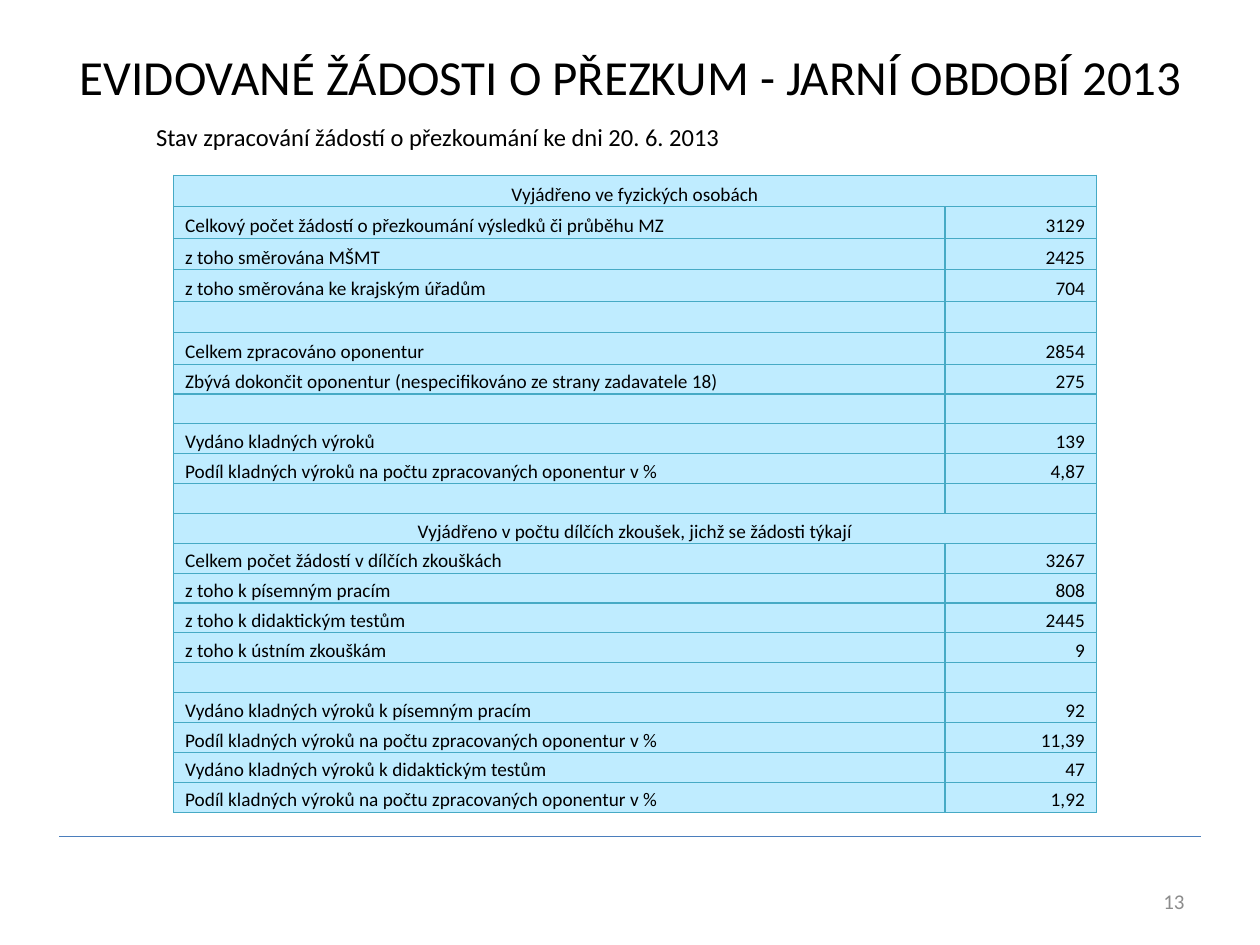
from lxml import etree
from pptx import Presentation
from pptx.dml.color import RGBColor
from pptx.enum import text
from pptx.oxml import ns
from pptx.util import Inches, Pt

FONT = "Calibri"
BLACK, GREY, BLUE = "000000", "8C8C8C", "4B7EBC"
CELL_FILL, CELL_BORDER = "BFECFF", "46AAC5"
LEFT, CENTER, RIGHT = text.PP_ALIGN.LEFT, text.PP_ALIGN.CENTER, text.PP_ALIGN.RIGHT
TOP, MIDDLE = text.MSO_ANCHOR.TOP, text.MSO_ANCHOR.MIDDLE

# One entry is a section heading, two are a label with its value, none is a gap.
REQUESTS = [
    ("Vyjádřeno ve fyzických osobách",),
    ("Celkový počet žádostí o přezkoumání výsledků či průběhu MZ", "3129"),
    ("z toho směrována MŠMT", "2425"),
    ("z toho směrována ke krajským úřadům", "704"),
    (),
    ("Celkem zpracováno oponentur", "2854"),
    ("Zbývá dokončit oponentur (nespecifikováno ze strany zadavatele 18)", "275"),
    (),
    ("Vydáno kladných výroků", "139"),
    ("Podíl kladných výroků na počtu zpracovaných oponentur v %", "4,87"),
    (),
    ("Vyjádřeno v počtu dílčích zkoušek, jichž se žádosti týkají",),
    ("Celkem počet žádostí v dílčích zkouškách", "3267"),
    ("z toho k písemným pracím", "808"),
    ("z toho k didaktickým testům", "2445"),
    ("z toho k ústním zkouškám", "9"),
    (),
    ("Vydáno kladných výroků k písemným pracím", "92"),
    ("Podíl kladných výroků na počtu zpracovaných oponentur v %", "11,39"),
    ("Vydáno kladných výroků k didaktickým testům", "47"),
    ("Podíl kladných výroků na počtu zpracovaných oponentur v %", "1,92"),
]
TALL_ROWS, TALL_HEIGHT = 6, 0.25


def rgb(value):
    return RGBColor.from_string(value)


def write(paragraph, words, size, color, align):
    paragraph.alignment = align
    run = paragraph.add_run()
    run.text = words
    run.font.name, run.font.size = FONT, Pt(size)
    run.font.color.rgb = rgb(color)


def add_label(slide, box, words, size, color=BLACK, align=LEFT, anchor=TOP):
    frame = slide.shapes.add_textbox(*map(Inches, box)).text_frame
    frame.word_wrap = True
    frame.vertical_anchor = anchor
    write(frame.paragraphs[0], words, size, color, align)


def add_footer(slide, box, number):
    """Rule along the top of the box, page number at its lower right."""
    left, top, width, height = box
    rule = slide.shapes.add_connector(
        1, Inches(left), Inches(top), Inches(left + width), Inches(top))
    rule.line.color.rgb = rgb(BLUE)
    rule.line.width = Pt(0.75)
    etree.SubElement(rule._element.spPr, ns.qn("a:effectLst"))
    add_label(slide, (left + width - 2.36, top + height - 0.4, 2.33, 0.4),
              number, 12, GREY, RIGHT, MIDDLE)


def style_cell(cell):
    """Thin border on all four sides, then the fill, in schema order."""
    properties = cell._tc.get_or_add_tcPr()
    for side in ("lnL", "lnR", "lnT", "lnB"):
        border = etree.SubElement(properties, ns.qn(f"a:{side}"), w=str(Pt(0.75)))
        solid = etree.SubElement(border, ns.qn("a:solidFill"))
        etree.SubElement(solid, ns.qn("a:srgbClr"), val=CELL_BORDER)
    cell.fill.solid()
    cell.fill.fore_color.rgb = rgb(CELL_FILL)
    cell.vertical_anchor = text.MSO_ANCHOR.BOTTOM
    cell.margin_left = cell.margin_right = cell.margin_top = Inches(0.01)
    cell.margin_bottom = 0


def add_request_table(slide, box):
    left, top, width, height = box
    table = slide.shapes.add_table(len(REQUESTS), 2, *map(Inches, box)).table
    value_width = 1.2
    table.columns[0].width = Inches(width - value_width)
    table.columns[1].width = Inches(value_width)
    low_height = (height - TALL_ROWS * TALL_HEIGHT) / (len(REQUESTS) - TALL_ROWS)

    for index, entries in enumerate(REQUESTS):
        table.rows[index].height = Inches(TALL_HEIGHT if index < TALL_ROWS else low_height)
        label, value = table.cell(index, 0), table.cell(index, 1)
        for cell in (label, value):
            style_cell(cell)
        if len(entries) == 1:
            label.merge(value)
            write(label.text_frame.paragraphs[0], entries[0], 11, BLACK, CENTER)
        elif entries:
            label.margin_left = value.margin_right = Inches(0.09)
            for cell, words, align in zip((label, value), entries, (LEFT, RIGHT)):
                write(cell.text_frame.paragraphs[0], words, 11, BLACK, align)
        else:
            for cell in (label, value):
                etree.SubElement(cell.text_frame.paragraphs[0]._p,
                                 ns.qn("a:endParaRPr"), sz="1100")


def main():
    deck = Presentation()
    deck.slide_width, deck.slide_height = Inches(10), Inches(7.5)
    slide = deck.slides.add_slide(deck.slide_layouts[6])
    add_footer(slide, (0.47, 6.64, 9.06, 0.71), "13")
    add_label(slide, (0.28, 0.29, 9.45, 0.63),
              "EVIDOVANÉ ŽÁDOSTI O PŘEZKUM - JARNÍ OBDOBÍ 2013",
              28, align=CENTER, anchor=MIDDLE)
    add_label(slide, (1.14, 0.92, 7.95, 0.34),
              "Stav zpracování žádostí o přezkoumání ke dni 20. 6. 2013", 14)
    add_request_table(slide, (1.38, 1.39, 7.32, 5.06))
    deck.save("out.pptx")


if __name__ == "__main__":
    main()
